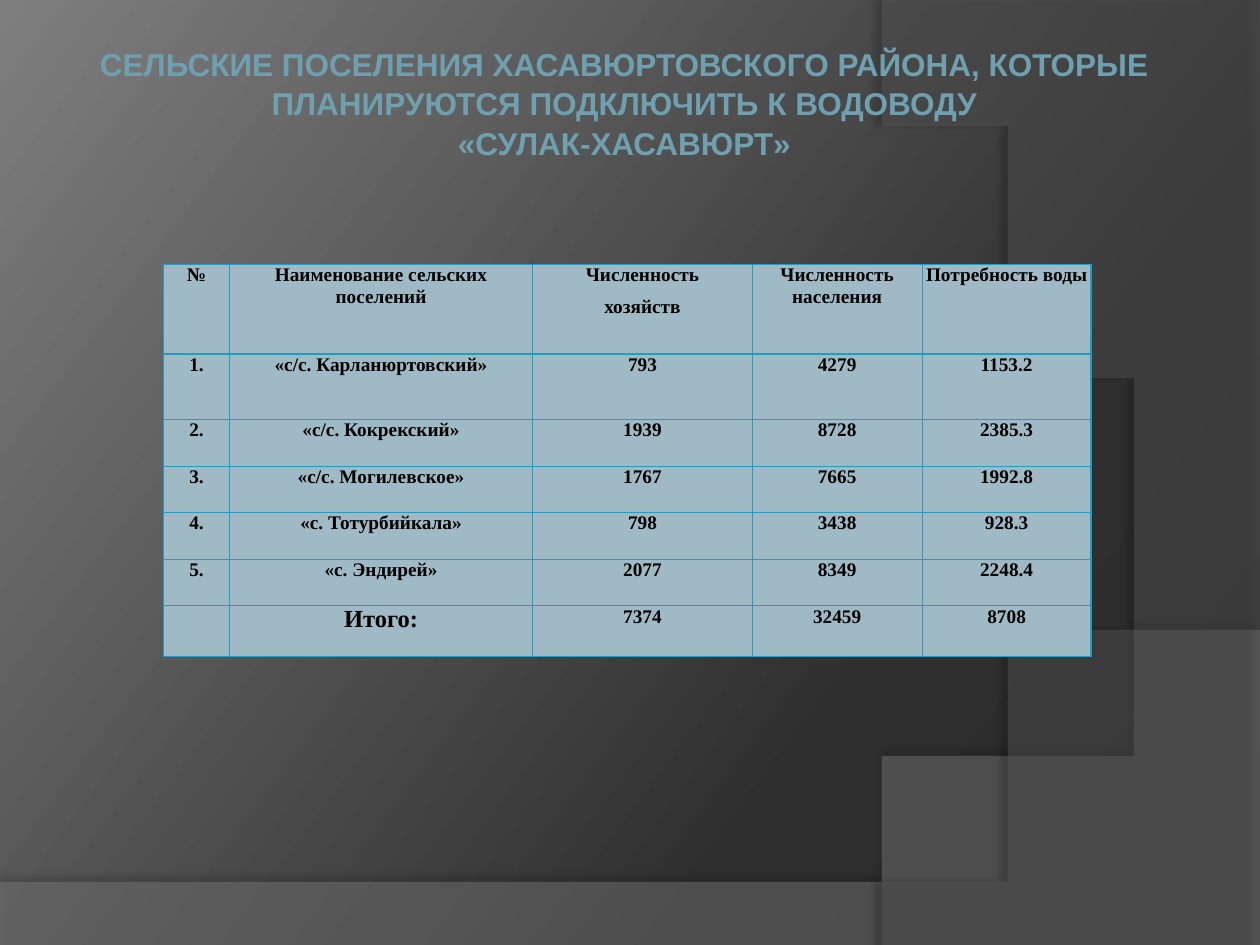
import copy

import pptx
import pptx.dml.color
import pptx.enum.text
import pptx.oxml
import pptx.oxml.ns
import pptx.util
from pptx.util import Inches

COLORS = {
    "title": "6EA0B0", "text": "000000", "cell": "9FBAC5", "border": "239BC2",
    "wave": "7F7F7F", "arc": "5E5E5E", "shadow": "000000",
}
BACKGROUND_STOPS = [(0, "282828"), (0.3, "2F2F2F"), (1, "7E7E7E")]
NS = pptx.oxml.ns.nsdecls("a")
rgb = pptx.dml.color.RGBColor.from_string
CENTER = pptx.enum.text.PP_ALIGN.CENTER


def curve(start, control1, control2, end, steps=60):
    """Points along a cubic Bezier curve."""
    points = []
    for i in range(steps + 1):
        t = i / steps
        weights = ((1 - t) ** 3, 3 * t * (1 - t) ** 2, 3 * t * t * (1 - t), t ** 3)
        points.append(tuple(
            sum(w * p[axis] for w, p in zip(weights, (start, control1, control2, end)))
            for axis in (0, 1)))
    return points


def style_runs(paragraph, font_name, size, color):
    paragraph.alignment = CENTER
    for run in paragraph.runs:
        run.font.name = font_name
        run.font.size = pptx.util.Pt(size)
        run.font.bold = True
        run.font.color.rgb = rgb(color)


prs = pptx.Presentation()
prs.slide_width, prs.slide_height = Inches(10), Inches(7.5)
slide = prs.slides.add_slide(prs.slide_layouts[5])

# Background gradient, light at the top left
backdrop = slide.background.fill
backdrop.gradient()
backdrop.gradient_angle = 143
stop_list = backdrop.gradient_stops[0]._gs.getparent()
stop_list.append(copy.deepcopy(stop_list[-1]))
for stop, (position, color) in zip(backdrop.gradient_stops, BACKGROUND_STOPS):
    stop.position = position
    stop.color.rgb = rgb(color)

# Translucent sweeps: outline, colour, opacity %, shadow opacity %, distance, direction
wave = [(0, 7.5), (10, 7.5)] + curve((10, 5.2), (5.59, 7.29), (3.91, 7.19), (0, 7.05))
arc = [(10, 0.02), (10, 7.5)] + curve((7.03, 7.5), (8.91, 6.19), (9.47, 2.75), (6.68, 0))
for outline, color, opacity, shade, distance, direction in [
    (wave, COLORS["wave"], 45, 35, 3.5, 270),
    (arc, COLORS["arc"], 40, 45, 4, 180),
]:
    builder = slide.shapes.build_freeform(*outline[0], scale=Inches(1))
    builder.add_line_segments(outline[1:], close=True)
    sweep = builder.convert_to_shape()
    sweep.fill.solid()
    sweep.fill.fore_color.rgb = rgb(color)
    sweep.line.fill.background()
    sweep.fill._xPr.find(".//" + pptx.oxml.ns.qn("a:srgbClr")).append(
        pptx.oxml.parse_xml(f'<a:alpha {NS} val="{opacity * 1000}"/>'))
    sweep._element.spPr.append(pptx.oxml.parse_xml(
        f'<a:effectLst {NS}><a:outerShdw blurRad="{pptx.util.Pt(4)}" '
        f'dist="{pptx.util.Pt(distance)}" dir="{direction * 60000}" rotWithShape="0">'
        f'<a:srgbClr val="{COLORS["shadow"]}"><a:alpha val="{shade * 1000}"/></a:srgbClr>'
        f'</a:outerShdw></a:effectLst>'))

# Title, in front of the sweeps
title = slide.shapes.title
slide.shapes._spTree.append(title._element)
title.left, title.top, title.width, title.height = map(Inches, (0.35, 0.29, 9.21, 1.01))
title.text_frame.text = (
    "СЕЛЬСКИЕ ПОСЕЛЕНИЯ ХАСАВЮРТОВСКОГО РАЙОНА, КОТОРЫЕ ПЛАНИРУЮТСЯ ПОДКЛЮЧИТЬ К ВОДОВОДУ\n"
    "«СУЛАК-ХАСАВЮРТ»")
title.text_frame.word_wrap = True
title.text_frame.auto_size = pptx.enum.text.MSO_AUTO_SIZE.NONE
title.text_frame.vertical_anchor = pptx.enum.text.MSO_ANCHOR.TOP
for paragraph in title.text_frame.paragraphs:
    style_runs(paragraph, "Arial", 18, COLORS["title"])
    paragraph.line_spacing = 1.05
    paragraph.space_before = pptx.util.Pt(0)

# Table of settlements
rows = [
    ["№", "Наименование сельских поселений", "Численность\nхозяйств",
     "Численность населения", "Потребность воды"],
    ["1.", "«с/с. Карланюртовский»", "793", "4279", "1153.2"],
    ["2.", "«с/с. Кокрекский»", "1939", "8728", "2385.3"],
    ["3.", "«с/с. Могилевское»", "1767", "7665", "1992.8"],
    ["4.", "«с. Тотурбийкала»", "798", "3438", "928.3"],
    ["5.", "«с. Эндирей»", "2077", "8349", "2248.4"],
    ["", "Итого:", "7374", "32459", "8708"],
]
column_widths = [0.52, 2.41, 1.74, 1.35, 1.34]
row_heights = [0.71, 0.52, 0.37, 0.37, 0.37, 0.37, 0.4]
settlements = slide.shapes.add_table(
    len(rows), len(column_widths), Inches(1.3), Inches(2.1),
    Inches(sum(column_widths)), Inches(sum(row_heights))).table
for column, width in zip(settlements.columns, column_widths):
    column.width = Inches(width)
for row, height, texts in zip(settlements.rows, row_heights, rows):
    row.height = Inches(height)
    for cell, text in zip(row.cells, texts):
        cell.margin_left = cell.margin_right = Inches(0.01)
        cell.margin_top = cell.margin_bottom = 0
        cell.fill.solid()
        cell.fill.fore_color.rgb = rgb(COLORS["cell"])
        cell.text_frame.text = text
        for paragraph in cell.text_frame.paragraphs:
            paragraph.font.size = pptx.util.Pt(11)
            style_runs(paragraph, "Times New Roman", 14 if text == "Итого:" else 11,
                       COLORS["text"])
        for i, side in enumerate("LRTB"):
            cell._tc.get_or_add_tcPr().insert(i, pptx.oxml.parse_xml(
                f'<a:ln{side} {NS} w="{pptx.util.Pt(0.75)}"><a:solidFill>'
                f'<a:srgbClr val="{COLORS["border"]}"/></a:solidFill></a:ln{side}>'))

# Gap between the two lines of the households heading
first_line, second_line = settlements.cell(0, 2).text_frame.paragraphs
first_line.space_after = second_line.space_before = pptx.util.Pt(3)

prs.save("out.pptx")
